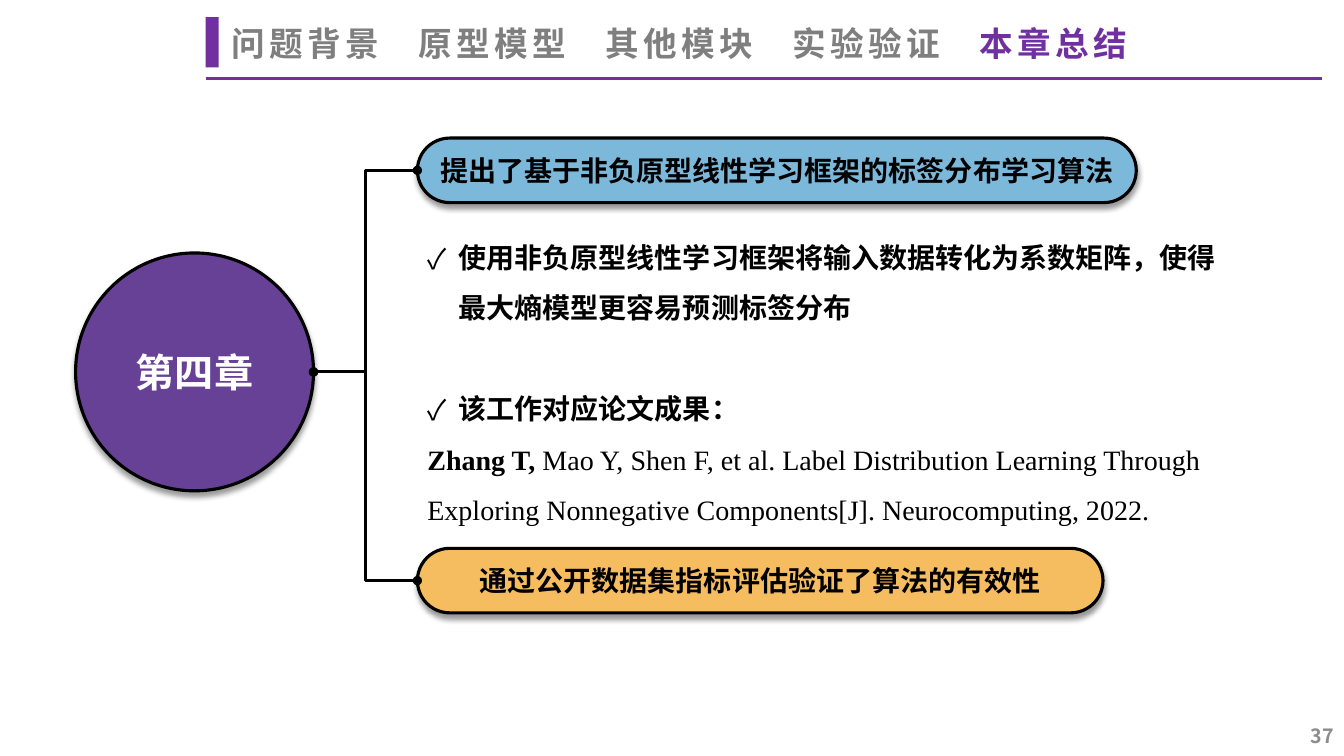
from lxml import etree
from pptx import Presentation
from pptx.dml.color import RGBColor
from pptx.enum import shapes, text
from pptx.oxml import ns
from pptx.util import Inches, Pt

W, H = 13.33, 7.5
HUES = {"violet": "7030A0", "plum": "674196", "sky": "7CB8DA", "amber": "F6BD60",
        "gray": "7F7F7F", "page": "8C8C8C", "ink": "000000", "white": "FFFFFF"}
SANS, BODY, SERIF = "Noto Sans CJK SC", "Calibri", "Times New Roman"
KIND = shapes.MSO_SHAPE
LINK = shapes.MSO_CONNECTOR
ALIGN = text.PP_ALIGN
MID = text.MSO_ANCHOR.MIDDLE

prs = Presentation()
prs.slide_width, prs.slide_height = Inches(W), Inches(H)
slide = prs.slides.add_slide(prs.slide_layouts[6])


def hue(name):
    return RGBColor.from_string(HUES[name])


def node(root, tag, **attrs):
    return etree.SubElement(root, ns.qn(tag), attrs)


def write(para, words, size=20, font=BODY, color="ink", bold=True, gap=None):
    run = para.add_run()
    run.text = words
    face = run.font
    face.size, face.bold, face.name = Pt(size), bold, font
    face.color.rgb = hue(color)
    props = run._r.get_or_add_rPr()
    node(props, "a:ea", typeface=SANS)
    if gap:
        props.set("spc", str(gap * 100))


def label(box, words="", align=ALIGN.LEFT, anchor=MID, **form):
    frame = slide.shapes.add_textbox(*map(Inches, box)).text_frame
    frame.word_wrap, frame.vertical_anchor = True, anchor
    para = frame.paragraphs[0]
    para.alignment = align
    if words:
        write(para, words, **form)
    return frame


def block(kind, box, fill, line=None):
    shape = slide.shapes.add_shape(kind, *map(Inches, box))
    shape.shadow.inherit = False
    shape.fill.solid()
    shape.fill.fore_color.rgb = hue(fill)
    if not line:
        shape.line.fill.background()
        return shape
    shape.line.color.rgb, shape.line.width = hue(line), Pt(2.25)
    glow = node(shape._element.spPr.find(ns.qn("a:effectLst")), "a:outerShdw",
                blurRad=str(Pt(4)), dist=str(Pt(3)), dir="5400000",
                algn="t", rotWithShape="0")
    shade = node(glow, "a:srgbClr", val=HUES["ink"])
    node(shade, "a:alpha", val="40000")
    return shape


def join(kind, start, end, color, dots=False):
    line = slide.shapes.add_connector(kind, *map(Inches, start + end))
    line.line.color.rgb, line.line.width = hue(color), Pt(2.25)
    if dots:
        stroke = line.line._get_or_add_ln()
        node(stroke, "a:headEnd", type="oval")
        node(stroke, "a:tailEnd", type="oval")
    node(line._element.spPr, "a:effectLst")
    return line


def header(box, tabs, active):
    x, y, w, h = box
    join(LINK.STRAIGHT, (x, y + h), (x + w, y + h), "violet")
    block(KIND.RECTANGLE, (x, y, 0.13, 0.5), "violet")
    para = label((x + 0.16, y + 0.04, w, 0.49)).paragraphs[0]
    para.line_spacing = 0.9
    stops = node(para._p.get_or_add_pPr(), "a:tabLst")
    for i in range(1, len(tabs)):
        node(stops, "a:tab", pos=str(Inches(1.855 * i)), algn="l")
    for i, name in enumerate(tabs):
        write(para, name if i == 0 else "\t" + name, size=24, font=SANS, gap=3,
              color="violet" if i == active else "gray")


def hub(box, title):
    x, y, w, h = box
    block(KIND.OVAL, box, "plum", "ink")
    label((x + 0.2, y + h / 2 - 0.29, w - 0.4, 0.57), title, align=ALIGN.CENTER,
          size=28, font=SANS, color="white")
    return x + w, y + h / 2


def pill(box, words, fill, start):
    shape = block(KIND.ROUNDED_RECTANGLE, box, fill, "ink")
    shape.adjustments[0] = 0.5
    frame = shape.text_frame
    frame.vertical_anchor = MID
    frame.paragraphs[0].alignment = ALIGN.CENTER
    write(frame.paragraphs[0], words)
    x, y, w, h = box
    join(LINK.ELBOW, start, (x, y + h / 2), "ink", dots=True).end_connect(shape, 1)


def points(box, items, cite):
    frame = label(box, anchor=text.MSO_ANCHOR.TOP)
    for i, words in enumerate(items):
        para = frame.add_paragraph() if i else frame.paragraphs[0]
        para.line_spacing = 1.5
        if i:
            para.space_before = Pt(36)
        props = para._p.get_or_add_pPr()
        props.set("marL", str(Inches(0.31)))
        props.set("indent", str(-Inches(0.31)))
        node(props, "a:buFont", typeface=SANS)
        node(props, "a:buChar", char="✓")
        write(para, words)
    para = frame.add_paragraph()
    para.line_spacing = 1.5
    author, rest = cite
    write(para, author, font=SERIF)
    write(para, rest, font=SERIF, bold=False)


header((2.04, 0.17, 11.07, 0.61),
       ["问题背景", "原型模型", "其他模块", "实验验证", "本章总结"], 4)
root = hub((0.75, 2.51, 2.36, 2.36), "第四章")
LEFT = 4.14
pill((LEFT, 1.37, 7.13, 0.64), "提出了基于非负原型线性学习框架的标签分布学习算法", "sky", root)
points((LEFT, 2.17, 8.27, 3.08),
       ["使用非负原型线性学习框架将输入数据转化为系数矩阵，使得最大熵模型更容易预测标签分布",
        "该工作对应论文成果："],
       ("Zhang T, ", "Mao Y, Shen F, et al. Label Distribution Learning Through "
        "Exploring Nonnegative Components[J]. Neurocomputing, 2022."))
pill((LEFT, 5.44, 6.8, 0.64), "通过公开数据集指标评估验证了算法的有效性", "amber", root)
label((W - 3, H - 0.4, 3, 0.4), "37", align=ALIGN.RIGHT, size=14, font=SANS, color="page")
prs.save("out.pptx")
